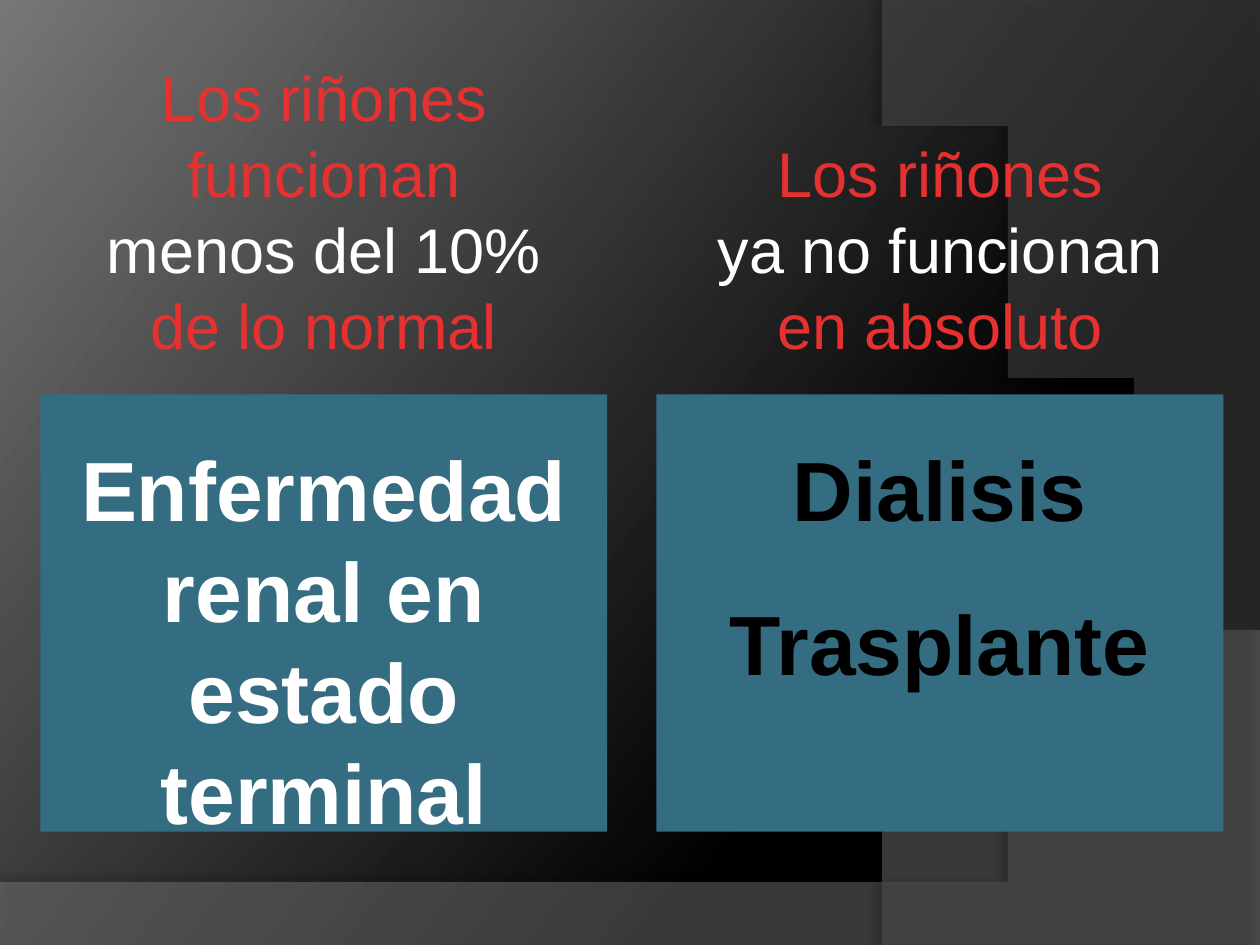
from lxml.etree import SubElement
from pptx import Presentation
from pptx.dml.color import RGBColor
from pptx.enum.shapes import MSO_SHAPE
from pptx.enum.text import MSO_ANCHOR, PP_ALIGN
from pptx.oxml.ns import qn
from pptx.util import Inches, Pt

WIDE, HIGH = 10, 7.5
RED, WHITE, BLACK, TEAL = "E63130", "FFFFFF", "000000", "346C81"


def tint(code):
    return RGBColor.from_string(code)


def paint(shape, code):
    shape.shadow.inherit = False
    shape.fill.solid()
    shape.fill.fore_color.rgb = tint(code)
    shape.line.fill.background()


def fade(color, share):
    SubElement(color, qn("a:alpha"), val=str(share * 1000))


def curve(a, b, c, d, steps=60):
    for i in range(1, steps + 1):
        t = i / steps
        u = 1 - t
        yield tuple(u**3 * p + 3 * u * u * t * q + 3 * u * t * t * r + t**3 * s
                    for p, q, r, s in zip(a, b, c, d))


def swoosh(slide, points, code, share, shade, dist, angle):
    pen = slide.shapes.build_freeform(*points[0], scale=Inches(1))
    pen.add_line_segments(points[1:], close=True)
    shape = pen.convert_to_shape()
    paint(shape, code)
    props = shape._element.spPr
    fade(props.find(qn("a:solidFill"))[0], share)
    glow = SubElement(props.find(qn("a:effectLst")), qn("a:outerShdw"),
                      blurRad=str(Pt(4)), dist=str(Pt(dist)),
                      dir=str(angle * 60000), rotWithShape="0")
    fade(SubElement(glow, qn("a:srgbClr"), val=BLACK), shade)


def backdrop(slide):
    fill = slide.background.fill
    fill.gradient()
    fill.gradient_angle = 143
    for stop, place, code in zip(fill.gradient_stops, (0.3, 1), (BLACK, "767676")):
        stop.position = place
        stop.color.rgb = tint(code)
    wave = [(0, 7.05), (0, HIGH), (WIDE, HIGH), (WIDE, 5.2),
            *curve((WIDE, 5.2), (5.59, 7.29), (3.91, 7.19), (0, 7.05))]
    swoosh(slide, wave, "7F7F7F", 45, 35, 3.5, 270)
    arc = [(WIDE, 0.02), (WIDE, HIGH), (7.03, HIGH),
           *curve((7.03, HIGH), (8.91, 6.19), (9.47, 2.75), (6.68, 0))]
    swoosh(slide, arc, "5E5E5E", 40, 45, 4, 180)


def label(group, box, paras, size, pitch, bold=False, anchor=MSO_ANCHOR.TOP):
    frame = group.shapes.add_textbox(*map(Inches, box)).text_frame
    frame.word_wrap = True
    frame.vertical_anchor = anchor
    for i, lines in enumerate(paras):
        para = frame.add_paragraph() if i else frame.paragraphs[0]
        for j, (text, code) in enumerate(lines):
            if j:
                para.add_line_break()
            run = para.add_run()
            run.text = text
            run.font.color.rgb = tint(code)
        para.alignment = PP_ALIGN.CENTER
        para.line_spacing = Pt(pitch)
        if i:
            para.space_before = Pt(30)
        para.font.name = "Arial"
        para.font.size = Pt(size)
        para.font.bold = bold


def column(slide, box, head, rows, body):
    x, y, w, h = box
    group = slide.shapes.add_group_shape()
    card = group.shapes.add_shape(MSO_SHAPE.RECTANGLE, *map(Inches, box))
    paint(card, TEAL)
    wide, tall = w * 1.05, rows * 0.6 + 0.12
    label(group, (x - (wide - w) / 2, y - 0.21 - tall, wide, tall),
          [head], 36, 43.3, anchor=MSO_ANCHOR.BOTTOM)
    label(group, (x, y + 0.29, w, h - 0.29), body, 48, 57.8, bold=True)


def main():
    deck = Presentation()
    deck.slide_width, deck.slide_height = Inches(WIDE), Inches(HIGH)
    slide = deck.slides.add_slide(deck.slide_layouts[6])
    backdrop(slide)
    column(slide, (0.32, 3.13, 4.5, 3.47),
           [("Los riñones funcionan", RED), ("menos del 10%", WHITE),
            ("de lo normal", RED)], 4,
           [[("Enfermedad renal en estado terminal", WHITE)]])
    column(slide, (5.21, 3.13, 4.5, 3.47),
           [("Los riñones", RED), ("ya no funcionan", WHITE),
            ("en absoluto", RED)], 3,
           [[("Dialisis", BLACK)], [("Trasplante", BLACK)]])
    deck.save("out.pptx")


if __name__ == "__main__":
    main()
